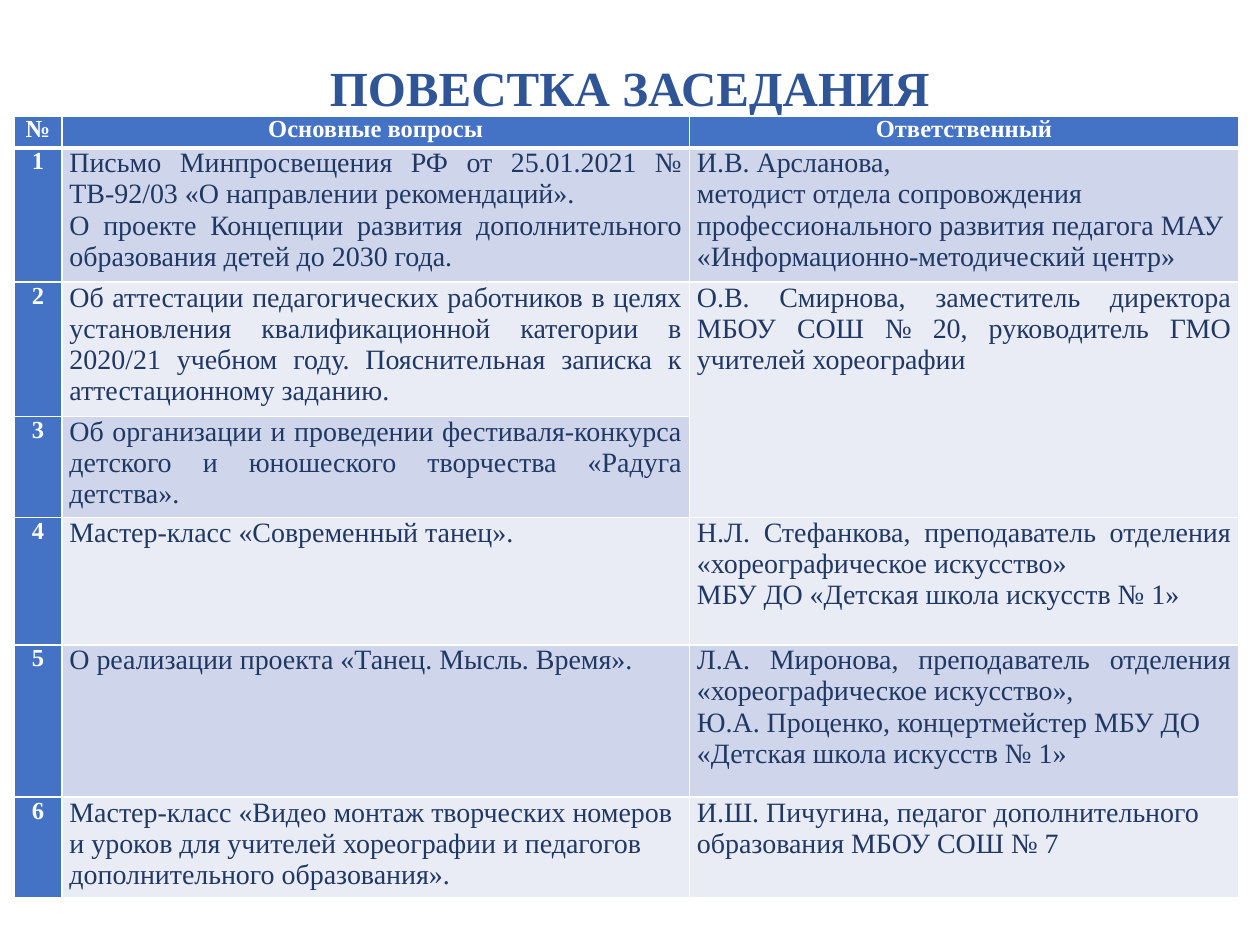
"""Build the meeting agenda slide with its table of questions and speakers."""
import lxml.etree
import pptx
import pptx.dml.color
import pptx.enum.text
import pptx.oxml.ns
import pptx.util

Cm, Pt = pptx.util.Cm, pptx.util.Pt
ALIGN = pptx.enum.text.PP_ALIGN
COLORS = {"title": "2F5597", "head": "4472C4", "text": "203864",
          "dark": "CFD5EA", "light": "E9EBF5", "white": "FFFFFF"}


def style_text(tf, align, size, color, bold):
    for p in tf.paragraphs:
        p.alignment = align
        for r in p.runs:
            r.font.name = "Times New Roman"
            r.font.size = Pt(size)
            r.font.bold = bold
            r.font.color.rgb = pptx.dml.color.RGBColor.from_string(COLORS[color])


def add_border(cell, side, width):
    qn = pptx.oxml.ns.qn
    tcPr = cell._tc.get_or_add_tcPr()
    ln = lxml.etree.SubElement(tcPr, qn(f"a:ln{side}"), w=str(Pt(width)))
    fill = lxml.etree.SubElement(ln, qn("a:solidFill"))
    lxml.etree.SubElement(fill, qn("a:srgbClr"), val=COLORS["white"])


prs = pptx.Presentation()
prs.slide_width, prs.slide_height = Cm(25.4), Cm(19.05)
s = prs.slides.add_slide(prs.slide_layouts[6])

sp = s.shapes.add_textbox(Cm(1.75), Cm(1.02), Cm(21.89), Cm(1.63))
tf = sp.text_frame
tf.word_wrap = True
tf.vertical_anchor = pptx.enum.text.MSO_ANCHOR.MIDDLE
tf.text = "ПОВЕСТКА ЗАСЕДАНИЯ"
tf.paragraphs[0].line_spacing = 0.9
style_text(tf, ALIGN.CENTER, 28, "title", True)

rows = [
    ("№", "Основные вопросы", "Ответственный"),
    ("1", "Письмо Минпросвещения РФ от 25.01.2021 № ТВ-92/03 «О направлении рекомендаций».\n"
          "О проекте Концепции развития дополнительного образования детей до 2030 года.",
     "И.В. Арсланова,\nметодист отдела сопровождения профессионального развития педагога "
     "МАУ «Информационно-методический центр»"),
    ("2", "Об аттестации педагогических работников в целях установления квалификационной "
          "категории в 2020/21 учебном году. Пояснительная записка к аттестационному заданию.",
     "О.В. Смирнова, заместитель директора МБОУ СОШ № 20, руководитель ГМО учителей хореографии"),
    ("3", "Об организации и проведении фестиваля-конкурса детского и юношеского творчества "
          "«Радуга детства».", ""),
    ("4", "Мастер-класс «Современный танец».",
     "Н.Л. Стефанкова, преподаватель отделения «хореографическое искусство»\n"
     "МБУ ДО «Детская школа искусств № 1»"),
    ("5", "О реализации проекта «Танец. Мысль. Время».",
     "Л.А. Миронова, преподаватель отделения «хореографическое искусство»,\n"
     "Ю.А. Проценко, концертмейстер МБУ ДО\n«Детская школа искусств № 1»"),
    ("6", "Мастер-класс «Видео монтаж творческих номеров и уроков для учителей хореографии "
          "и педагогов дополнительного образования».",
     "И.Ш. Пичугина, педагог дополнительного образования МБОУ СОШ № 7"),
]
col_widths = [0.97, 12.65, 11.07]
row_heights = [0.64, 2.57, 2.57, 1.88, 2.57, 3.07, 1.88]
left_aligned = {(1, 2), (6, 1), (6, 2)}

table = s.shapes.add_table(len(rows), len(col_widths), Cm(0.28), Cm(2.34),
                           Cm(sum(col_widths)), Cm(sum(row_heights))).table
table.first_col = True
for col, width in zip(table.columns, col_widths):
    col.width = Cm(width)
for row, height in zip(table.rows, row_heights):
    row.height = Cm(height)
table.cell(2, 2).merge(table.cell(3, 2))

for i, texts in enumerate(rows):
    for j, text in enumerate(texts):
        cell = table.cell(i, j)
        cell.margin_left = cell.margin_right = Cm(0.15)
        cell.margin_top = cell.margin_bottom = 0
        for side in "LRTB":
            add_border(cell, side, 3 if (i, side) in {(0, "B"), (1, "T")} else 1)
        heading = i == 0 or j == 0
        fill = "head" if heading else "dark" if i % 2 else "light"
        cell.fill.solid()
        cell.fill.fore_color.rgb = pptx.dml.color.RGBColor.from_string(COLORS[fill])
        if not text:
            continue
        cell.text_frame.text = text
        if heading:
            style_text(cell.text_frame, ALIGN.CENTER, 14, "white", True)
        else:
            align = ALIGN.LEFT if (i, j) in left_aligned else ALIGN.JUSTIFY
            style_text(cell.text_frame, align, 16, "text", False)

prs.save("out.pptx")
